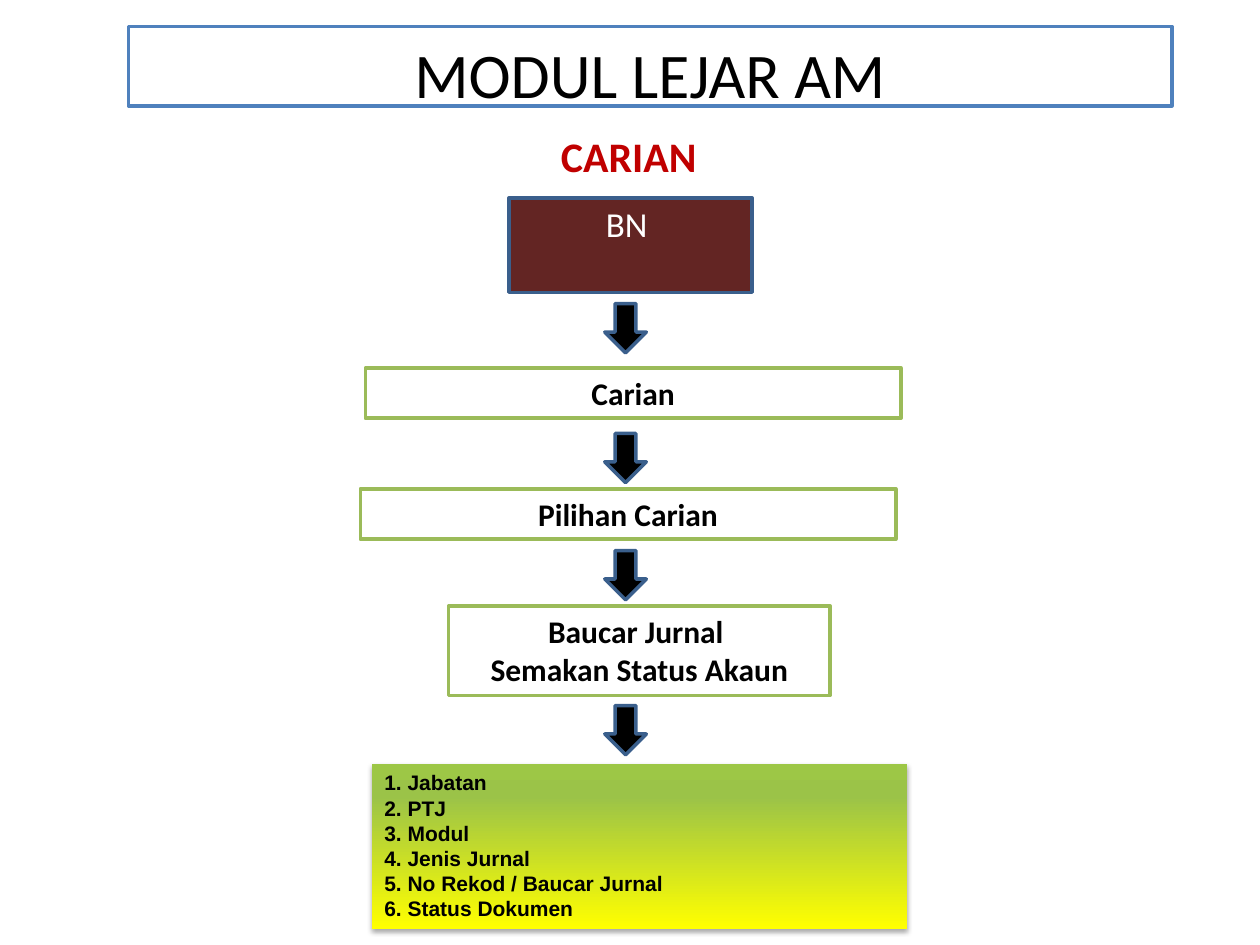
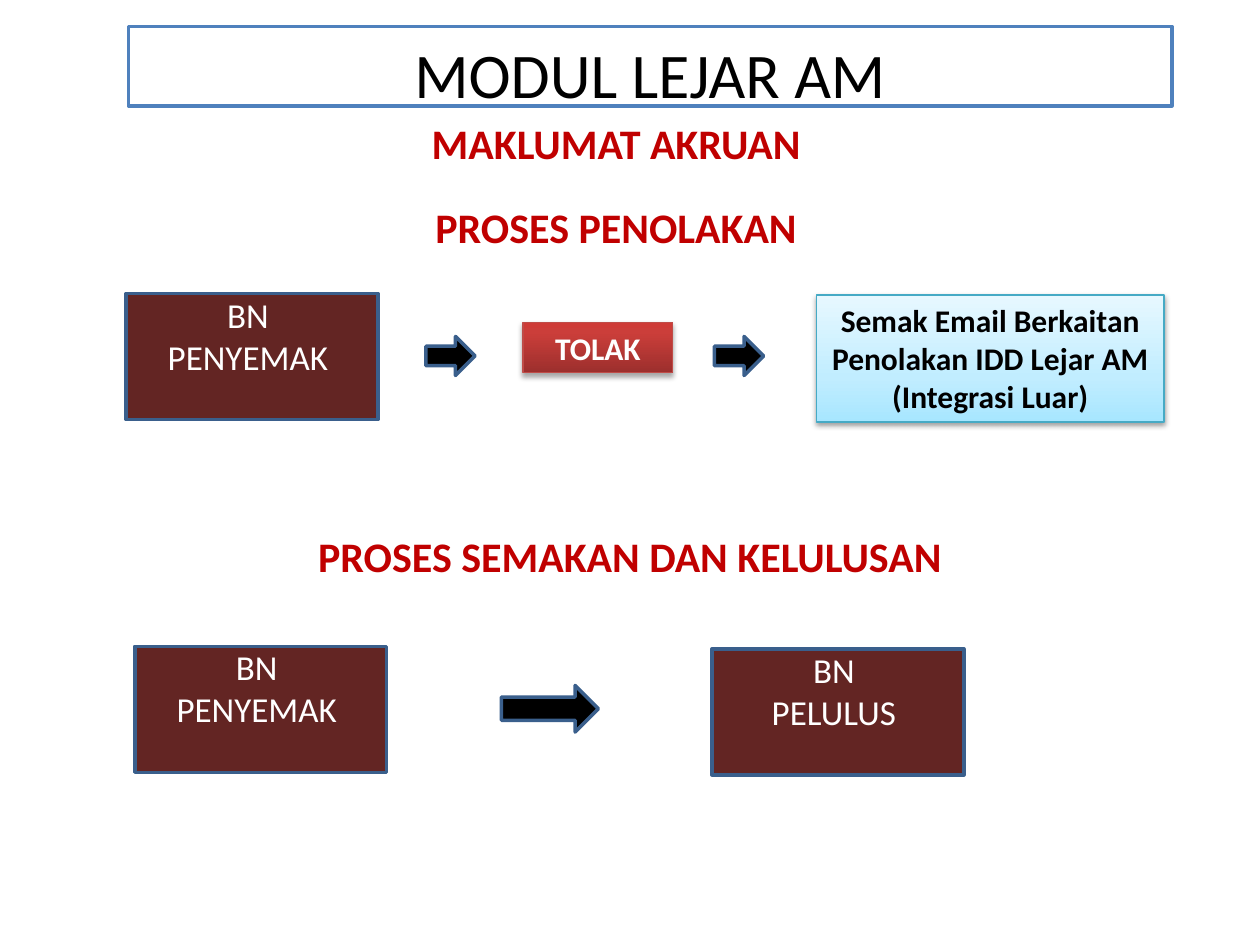
"""Builds two process slides for the general ledger module."""
from dataclasses import dataclass
from typing import NamedTuple, Optional

from lxml import etree
from pptx import Presentation
from pptx.dml.color import RGBColor
from pptx.enum.shapes import MSO_SHAPE
from pptx.enum.text import MSO_ANCHOR, MSO_AUTO_SIZE, PP_ALIGN
from pptx.oxml.ns import qn
from pptx.util import Inches, Pt

RECTANGLE = MSO_SHAPE.RECTANGLE
DOWN, RIGHT = MSO_SHAPE.DOWN_ARROW, MSO_SHAPE.RIGHT_ARROW
TOP, MIDDLE = MSO_ANCHOR.TOP, MSO_ANCHOR.MIDDLE
LEFT, CENTER = PP_ALIGN.LEFT, PP_ALIGN.CENTER
NO_AUTOFIT = MSO_AUTO_SIZE.NONE

WIDTH, HEIGHT = Inches(10), Inches(7.5)
COLUMN, ROW = WIDTH / 100, HEIGHT / 75

BLACK, WHITE, HEADING_RED = "000000", "FFFFFF", "C00000"
MAROON, NAVY = "632523", "3A5F8C"
TITLE_BLUE, STEP_GREEN = "4F81BD", "9BBB59"
CONTENT_LAYOUT, TITLE_ONLY_LAYOUT = 1, 5


class Area(NamedTuple):
    """A place on the grid, in columns and rows."""
    col: float
    row: float
    cols: float
    rows: float

    def frame(self) -> tuple[int, int, int, int]:
        """Return left, top, width and height in EMU."""
        return (round(self.col * COLUMN), round(self.row * ROW),
                round(self.cols * COLUMN), round(self.rows * ROW))


@dataclass(frozen=True)
class Look:
    """The fill, outline, shadow and lettering of a block."""
    fill: Optional[str] = None
    stops: tuple[tuple[int, str], ...] = ()
    line: Optional[str] = None
    line_width: float = 2
    shadow: Optional[tuple[int, float]] = None
    color: str = BLACK
    size: float = 18
    bold: bool = True
    anchor: MSO_ANCHOR = TOP
    bottom: float = 0.05


class Block(NamedTuple):
    """A box of text in one look."""
    text: str
    area: Area
    look: Look


class Heading(NamedTuple):
    """A red section heading."""
    text: str
    area: Area


ROLE = Look(fill=MAROON, line=NAVY, color=WHITE, size=20, bold=False,
            anchor=MIDDLE, bottom=0.39)
STEP = Look(fill=WHITE, line=STEP_GREEN)
ARROW = Look(fill=BLACK, line=NAVY)
TITLE = Look(fill=WHITE, line=TITLE_BLUE)
CRITERIA = Look(stops=((0, "FFFF00"), (80, "9BC348"), (100, "9DC746")),
                shadow=(35, 1.8))
REJECTION = Look(stops=((0, "9C2F2D"), (80, "CB3E3A"), (100, "CE3B37")),
                 line="BF4C48", line_width=0.75, shadow=(35, 1.8), color=WHITE)
NOTICE = Look(stops=((0, "A7E6FF"), (35, "C1EDFF"), (100, "E7F8FF")),
              line="46AAC5", line_width=0.75, shadow=(38, 1.6))

TITLE_AREA = Area(10.2, 2.1, 82.8, 6.3)
CRITERIA_AREA = Area(29.5, 60.6, 42.5, 13.1)
SEARCH_CRITERIA = "\n".join(
    f"{number}. {criterion}" for number, criterion in enumerate(
        ("Jabatan", "PTJ", "Modul", "Jenis Jurnal",
         "No Rekod / Baucar Jurnal", "Status Dokumen"), start=1))

SEARCH_HEADINGS = (Heading("CARIAN", Area(31, 9.9, 37.8, 5)),)
SEARCH_STEPS = (
    Block("BN ", Area(40.4, 15.7, 19.3, 7.5), ROLE),
    Block("Carian", Area(29, 29.2, 42.5, 4), STEP),
    Block("Pilihan Carian", Area(28.6, 38.8, 42.5, 4), STEP),
    Block("Baucar Jurnal \nSemakan Status Akaun", Area(35.6, 48.1, 30.3, 7.1), STEP),
)
SEARCH_ARROWS = tuple(Area(48, row, 3.3, 3.9) for row in (24.1, 34.4, 43.7, 56))

APPROVAL_HEADINGS = (
    Heading("MAKLUMAT AKRUAN", Area(30, 8.8, 37.8, 5)),
    Heading("PROSES PENOLAKAN", Area(30, 15.5, 37.8, 5)),
    Heading("PROSES SEMAKAN DAN KELULUSAN", Area(22.7, 41.6, 54.6, 5)),
)
APPROVAL_STEPS = (
    Block("BN \nPENYEMAK ", Area(10, 23.3, 20, 10), ROLE),
    Block("TOLAK", Area(41.5, 25.6, 11.9, 4), REJECTION),
    Block("Semak Email Berkaitan Penolakan IDD Lejar AM (Integrasi Luar)",
          Area(64.8, 23.4, 27.6, 10.1), NOTICE),
    Block("BN \nPENYEMAK ", Area(10.7, 51.3, 20, 10), ROLE),
    Block("BN \nPELULUS ", Area(56.5, 51.5, 20, 10), ROLE),
)
APPROVAL_ARROWS = (
    Area(33.8, 26.7, 3.9, 3.1),
    Area(56.7, 26.7, 3.9, 3.1),
    Area(39.8, 54.4, 7.7, 3.7),
)


def rgb(hex_color: str) -> RGBColor:
    """Turn a hex string into a colour."""
    return RGBColor.from_string(hex_color)


def write(shape, text: str, *, size: float = 18, color: str = BLACK,
          bold: bool = True, font: str = "Calibri", align: PP_ALIGN = CENTER,
          anchor: MSO_ANCHOR = TOP, top: float = 0.05, bottom: float = 0.05) -> None:
    """Write formatted lines of text into a shape."""
    frame = shape.text_frame
    frame.text = text
    frame.word_wrap = True
    frame.auto_size = NO_AUTOFIT
    frame.vertical_anchor = anchor
    frame.margin_left = frame.margin_right = Inches(0.1)
    frame.margin_top, frame.margin_bottom = Inches(top), Inches(bottom)
    for paragraph in frame.paragraphs:
        paragraph.alignment = align
        paragraph.space_before = Pt(0)
        for run in paragraph.runs:
            run.font.name = font
            run.font.size = Pt(size)
            run.font.bold = bold
            run.font.color.rgb = rgb(color)


def place(shape, area: Area) -> None:
    """Move a placeholder to its area."""
    shape.left, shape.top, shape.width, shape.height = area.frame()


def fill_gradient(shape, stops: tuple[tuple[int, str], ...]) -> None:
    """Fill a shape with colours running from bottom to top."""
    shape.fill.gradient()
    shape.fill.gradient_angle = 90
    stop_list = next(shape.element.iter(qn("a:gsLst")))
    for old_stop in list(stop_list):
        stop_list.remove(old_stop)
    for percent, color in stops:
        stop = etree.SubElement(stop_list, qn("a:gs"), pos=str(percent * 1000))
        etree.SubElement(stop, qn("a:srgbClr"), val=color)


def cast_shadow(shape, opacity: int, distance: float) -> None:
    """Add a soft shadow below a shape."""
    effects = next(shape.element.iter(qn("a:effectLst")))
    shadow = etree.SubElement(
        effects, qn("a:outerShdw"), blurRad=str(Pt(3.1)), dist=str(Pt(distance)),
        dir=str(90 * 60000), rotWithShape="0")
    color = etree.SubElement(shadow, qn("a:srgbClr"), val=BLACK)
    etree.SubElement(color, qn("a:alpha"), val=str(opacity * 1000))


def style(shape, look: Look) -> None:
    """Apply a look's fill, outline and shadow."""
    if look.stops:
        fill_gradient(shape, look.stops)
    else:
        shape.fill.solid()
        shape.fill.fore_color.rgb = rgb(look.fill)
    if look.line:
        shape.line.color.rgb = rgb(look.line)
        shape.line.width = Pt(look.line_width)
    else:
        shape.line.fill.background()
    shape.shadow.inherit = False
    if look.shadow:
        cast_shadow(shape, *look.shadow)


def draw_block(slide, block: Block) -> None:
    """Draw one box with its text."""
    look = block.look
    shape = slide.shapes.add_shape(RECTANGLE, *block.area.frame())
    style(shape, look)
    write(shape, block.text, size=look.size, color=look.color, bold=look.bold,
          anchor=look.anchor, bottom=look.bottom)


def draw_arrow(slide, direction: MSO_SHAPE, area: Area) -> None:
    """Draw one block arrow."""
    style(slide.shapes.add_shape(direction, *area.frame()), ARROW)


def draw_heading(slide, heading: Heading) -> None:
    """Draw one section heading."""
    label = slide.shapes.add_textbox(*heading.area.frame())
    write(label, heading.text, size=24, color=HEADING_RED)


def draw_criteria(slide) -> None:
    """Set the search criteria in the body placeholder."""
    criteria = slide.placeholders[1]
    place(criteria, CRITERIA_AREA)
    style(criteria, CRITERIA)
    write(criteria, SEARCH_CRITERIA, size=12, font="Arial", align=LEFT)
    for paragraph in criteria.text_frame.paragraphs:
        properties = paragraph._p.get_or_add_pPr()
        properties.set("marL", "0")
        properties.set("indent", "0")
        etree.SubElement(properties, qn("a:buNone"))


def add_process_slide(deck, layout: int, headings: tuple[Heading, ...],
                      steps: tuple[Block, ...], direction: MSO_SHAPE,
                      arrows: tuple[Area, ...]):
    """Add a titled slide with headings, steps and arrows."""
    slide = deck.slides.add_slide(deck.slide_layouts[layout])
    title = slide.shapes.title
    place(title, TITLE_AREA)
    style(title, TITLE)
    write(title, "MODUL LEJAR AM", size=36.3, bold=False, top=0.07, bottom=0)
    for heading in headings:
        draw_heading(slide, heading)
    for step in steps:
        draw_block(slide, step)
    for area in arrows:
        draw_arrow(slide, direction, area)
    return slide


def main() -> None:
    """Build and save the deck."""
    deck = Presentation()
    deck.slide_width, deck.slide_height = WIDTH, HEIGHT
    search = add_process_slide(deck, CONTENT_LAYOUT, SEARCH_HEADINGS,
                               SEARCH_STEPS, DOWN, SEARCH_ARROWS)
    draw_criteria(search)
    add_process_slide(deck, TITLE_ONLY_LAYOUT, APPROVAL_HEADINGS,
                      APPROVAL_STEPS, RIGHT, APPROVAL_ARROWS)
    deck.save("out.pptx")


if __name__ == "__main__":
    main()
